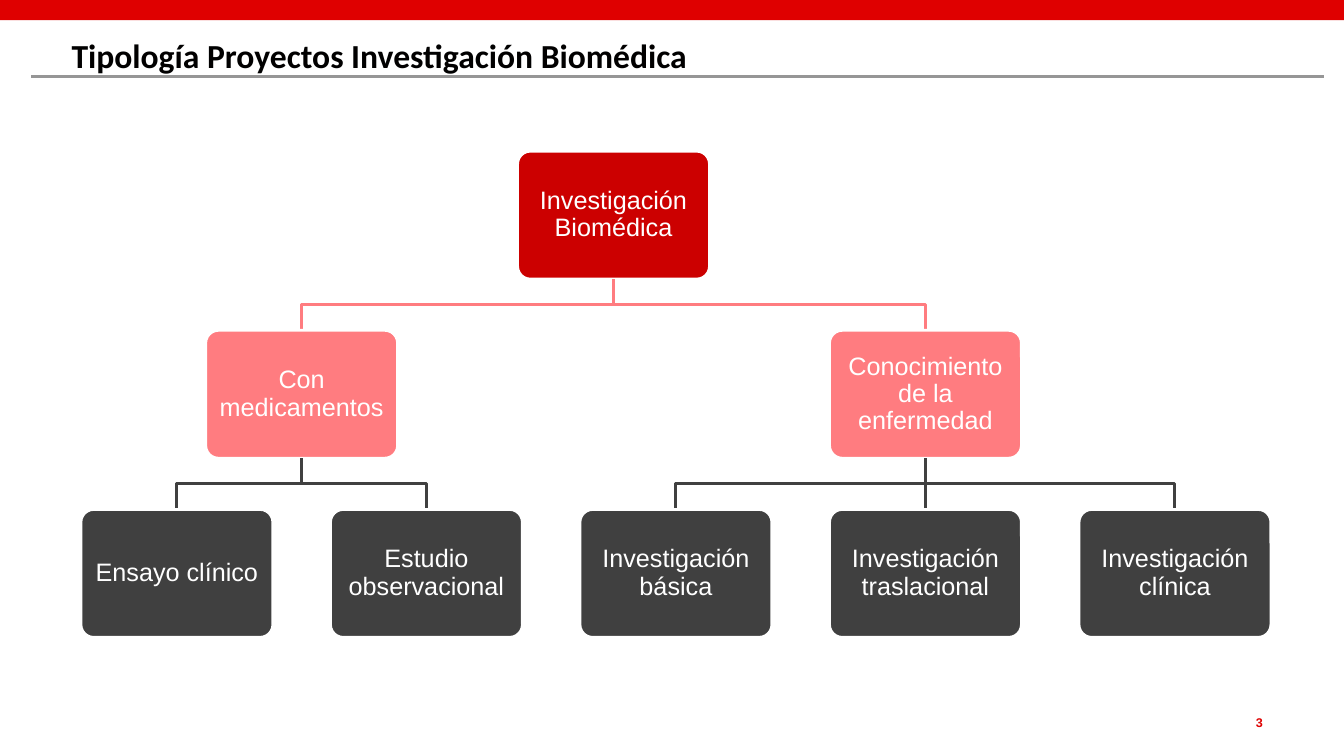
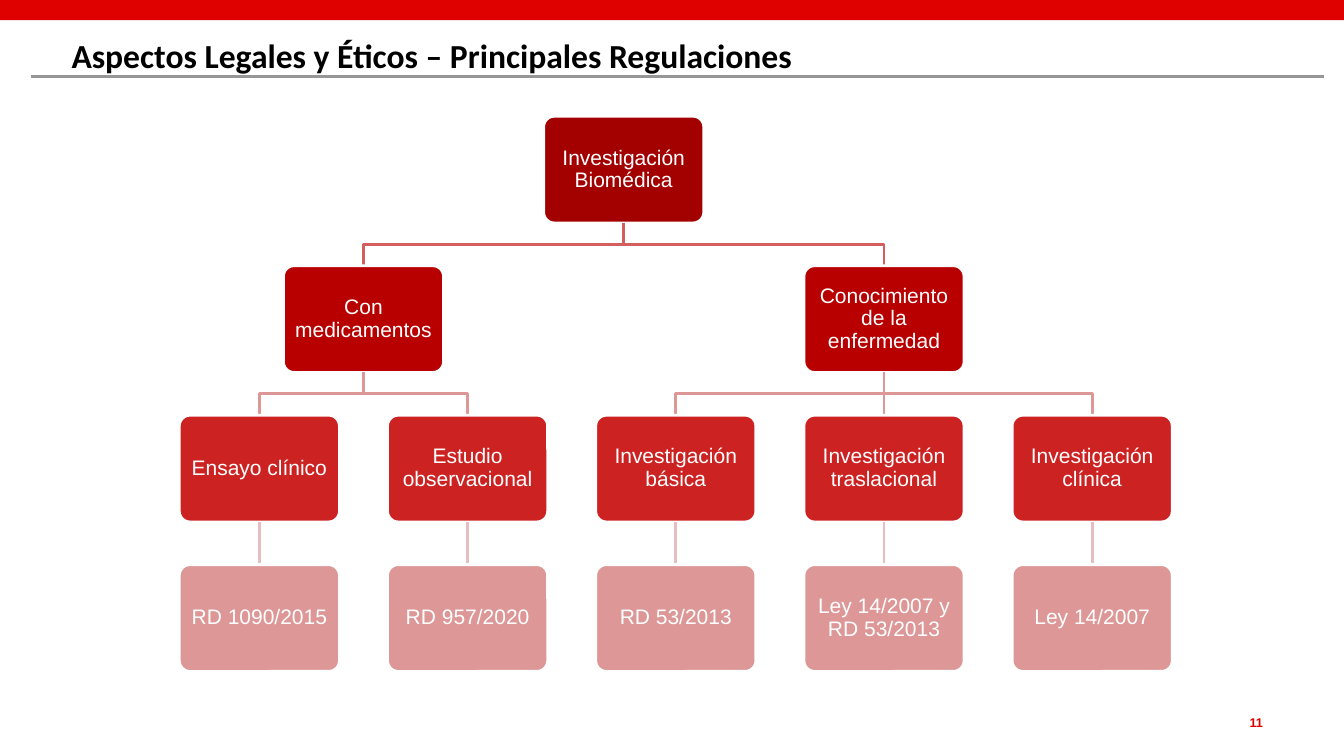
from dataclasses import dataclass

from lxml import etree
from pptx import Presentation
from pptx import util as u
from pptx.dml import color
from pptx.enum import shapes, text
from pptx.oxml import ns

RED, GREY, BLACK, WHITE = "DF0000", "969696", "010000", "FFFFFF"
BODY_FONT, TITLE_FONT = "Arial", "Calibri"


@dataclass(frozen=True)
class Node:
    label: str
    children: tuple["Node", ...] = ()


@dataclass(frozen=True)
class Level:
    fill: str
    link: str = WHITE


@dataclass(frozen=True)
class Chart:
    left: float
    top: float
    box_width: float
    font_size: float
    levels: tuple[Level, ...]

    @property
    def box_height(self) -> float:
        return self.box_width / 1.5

    def center(self, column: float) -> float:
        return self.left + self.box_width * (0.5 + 1.3 * column)

    def row_top(self, depth: int) -> float:
        return self.top + self.box_height * 1.4 * depth


@dataclass(frozen=True)
class Page:
    title: str
    number: int
    chart: Chart
    root: Node


def rgb(value: str) -> color.RGBColor:
    return color.RGBColor.from_string(value)


def add_run(paragraph, content: str, font: str, size: float, colour: str, bold: bool = False) -> None:
    run = paragraph.add_run()
    run.text = content
    run.font.name = font
    run.font.size = u.Pt(size)
    run.font.bold = bold
    run.font.color.rgb = rgb(colour)


def set_frame(shape, inset: float, anchor, alignment):
    frame = shape.text_frame
    frame.word_wrap = True
    frame.margin_left = frame.margin_right = u.Pt(inset)
    frame.margin_top = frame.margin_bottom = u.Pt(inset)
    frame.vertical_anchor = anchor
    paragraph = frame.paragraphs[0]
    paragraph.alignment = alignment
    return paragraph


def add_text(slide, left: float, top: float, width: float, height: float, inset: float, alignment):
    box = slide.shapes.add_textbox(u.Pt(left), u.Pt(top), u.Pt(width), u.Pt(height))
    return set_frame(box, inset, text.MSO_ANCHOR.TOP, alignment)


def add_line(slide, start: tuple[float, float], end: tuple[float, float], colour: str, width: float) -> None:
    line = slide.shapes.add_connector(
        shapes.MSO_CONNECTOR.STRAIGHT, *(u.Pt(value) for value in (*start, *end))
    )
    line.line.color.rgb = rgb(colour)
    line.line.width = u.Pt(width)
    etree.SubElement(line._element.spPr, ns.qn("a:effectLst"))


def add_frame(slide, title: str, number: int) -> None:
    band = slide.shapes.add_shape(shapes.MSO_SHAPE.RECTANGLE, 0, 0, u.Pt(960), u.Pt(14.4))
    band.shadow.inherit = False
    band.fill.solid()
    band.fill.fore_color.rgb = rgb(RED)
    band.line.fill.background()
    add_line(slide, (22.3, 54.7), (945.4, 54.7), GREY, 2.25)
    heading = add_text(slide, 47.5, 21.6, 880, 33.8, 3.6, text.PP_ALIGN.LEFT)
    add_run(heading, title, TITLE_FONT, 24, BLACK, True)
    footer = add_text(slide, 811.4, 510.5, 90.7, 10.8, 0, text.PP_ALIGN.RIGHT)
    add_run(footer, str(number), BODY_FONT, 9, RED, True)


def leaf_count(node: Node) -> int:
    return sum(map(leaf_count, node.children)) or 1


def column_of(node: Node, first: int) -> float:
    if not node.children:
        return first
    last_child = node.children[-1]
    last_first = first + leaf_count(node) - leaf_count(last_child)
    return (column_of(node.children[0], first) + column_of(last_child, last_first)) / 2


def add_box(slide, chart: Chart, label: str, column: float, depth: int) -> None:
    box = slide.shapes.add_shape(
        shapes.MSO_SHAPE.ROUNDED_RECTANGLE,
        u.Pt(chart.center(column) - chart.box_width / 2),
        u.Pt(chart.row_top(depth)),
        u.Pt(chart.box_width),
        u.Pt(chart.box_height),
    )
    box.adjustments[0] = 0.1
    box.shadow.inherit = False
    box.fill.solid()
    box.fill.fore_color.rgb = rgb(chart.levels[depth].fill)
    box.line.color.rgb = rgb(WHITE)
    box.line.width = u.Pt(2)
    paragraph = set_frame(box, chart.font_size * 0.3, text.MSO_ANCHOR.MIDDLE, text.PP_ALIGN.CENTER)
    paragraph.line_spacing = 0.9
    add_run(paragraph, label, BODY_FONT, chart.font_size, WHITE)


def add_link(slide, chart: Chart, parent: float, child: float, depth: int) -> None:
    start_x, end_x = chart.center(parent), chart.center(child)
    end_y = chart.row_top(depth)
    start_y = chart.row_top(depth - 1) + chart.box_height
    colour = chart.levels[depth].link
    if parent == child:
        add_line(slide, (start_x, start_y), (end_x, end_y), colour, 2)
        return
    middle_y = (start_y + end_y) / 2
    builder = slide.shapes.build_freeform(u.Pt(start_x), u.Pt(start_y))
    corners = ((start_x, middle_y), (end_x, middle_y), (end_x, end_y))
    builder.add_line_segments([(u.Pt(x), u.Pt(y)) for x, y in corners], close=False)
    elbow = builder.convert_to_shape()
    elbow.shadow.inherit = False
    elbow.fill.background()
    elbow.line.color.rgb = rgb(colour)
    elbow.line.width = u.Pt(2)


def add_tree(slide, chart: Chart, node: Node, first: int = 0, depth: int = 0) -> None:
    column = column_of(node, first)
    add_box(slide, chart, node.label, column, depth)
    for child in node.children:
        add_link(slide, chart, column, column_of(child, first), depth + 1)
        add_tree(slide, chart, child, first, depth + 1)
        first += leaf_count(child)


def research_tree(regulations: dict[str, str]) -> Node:
    def study(label: str) -> Node:
        rule = regulations.get(label)
        return Node(label, (Node(rule),) if rule else ())

    return Node("Investigación Biomédica", tuple(
        Node(branch, tuple(map(study, studies))) for branch, studies in BRANCHES.items()
    ))


BRANCHES = {
    "Con medicamentos": ("Ensayo clínico", "Estudio observacional"),
    "Conocimiento de la enfermedad": (
        "Investigación básica", "Investigación traslacional", "Investigación clínica",
    ),
}
REGULATIONS = {
    "Ensayo clínico": "RD 1090/2015",
    "Estudio observacional": "RD 957/2020",
    "Investigación básica": "RD 53/2013",
    "Investigación traslacional": "Ley 14/2007 y RD 53/2013",
    "Investigación clínica": "Ley 14/2007",
}
PAGES = (
    Page(
        "Tipología Proyectos Investigación Biomédica", 3,
        Chart(57.8, 108, 137.1, 18, (
            Level("CC0000"), Level("FF7C80", "FF7C80"), Level("404040", "404040"),
        )),
        research_tree({}),
    ),
    Page(
        "Aspectos Legales y Éticos – Principales Regulaciones", 11,
        Chart(128.1, 83, 114.4, 15, (
            Level("A30000"), Level("B90000", "D25E5E"),
            Level("CD2222", "DD9797"), Level("DD9797", "E7BDBD"),
        )),
        research_tree(REGULATIONS),
    ),
)


def main() -> None:
    presentation = Presentation()
    presentation.slide_width, presentation.slide_height = u.Pt(960), u.Pt(540)
    for page in PAGES:
        slide = presentation.slides.add_slide(presentation.slide_layouts[6])
        add_frame(slide, page.title, page.number)
        add_tree(slide, page.chart, page.root)
    presentation.save("out.pptx")


if __name__ == "__main__":
    main()
